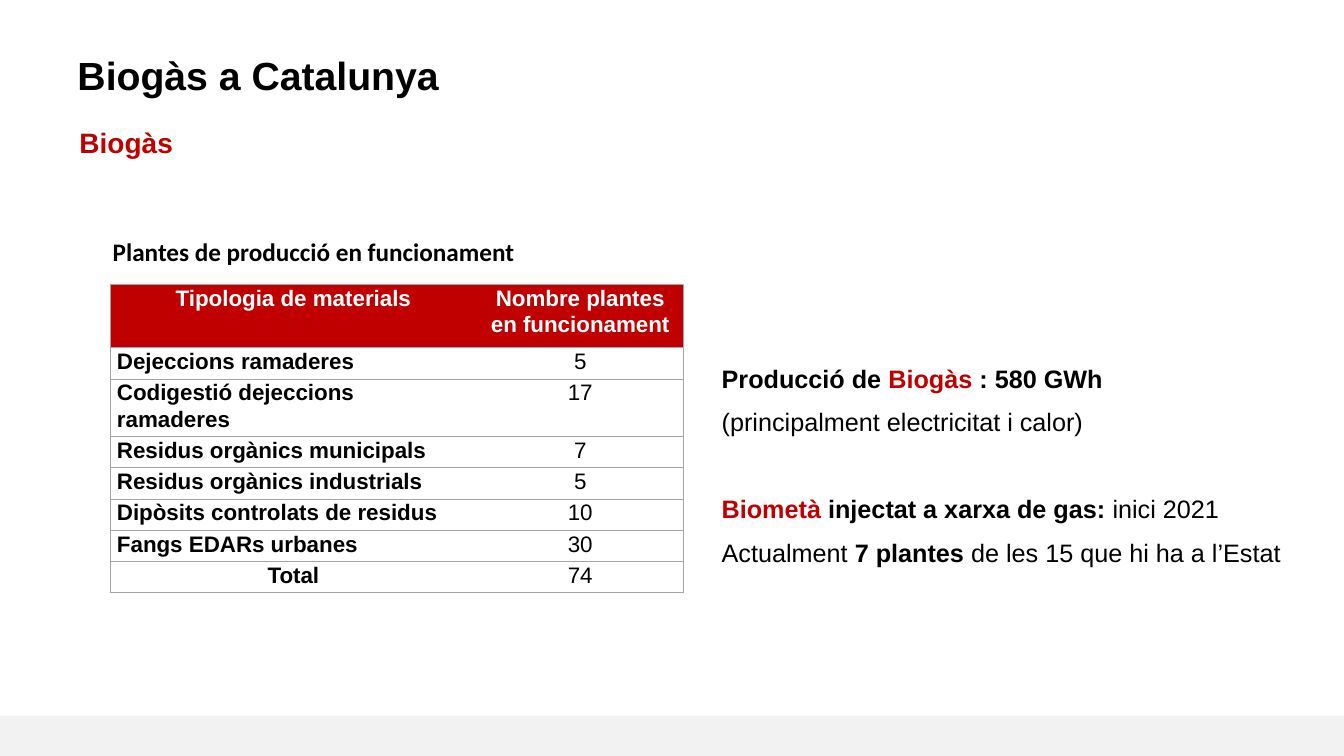
from lxml import etree
from pptx import Presentation
from pptx.dml.color import RGBColor
from pptx.enum import shapes, text
from pptx.oxml import ns
from pptx.util import Inches, Pt

RED, BLACK, WHITE, GREY, PALE = "C00000", "000000", "FFFFFF", "A5A5A5", "F2F2F2"
LEFT, CENTER, JUSTIFY = text.PP_ALIGN.LEFT, text.PP_ALIGN.CENTER, text.PP_ALIGN.JUSTIFY

# Content
TITLE = "Biogàs a Catalunya"
SUBTITLE = "Biogàs"
CAPTION = "Plantes de producció en funcionament"
PLANTS = [
    ("Tipologia de materials", "Nombre plantes en funcionament"),
    ("Dejeccions ramaderes", "5"),
    ("Codigestió dejeccions ramaderes", "17"),
    ("Residus orgànics municipals", "7"),
    ("Residus orgànics industrials", "5"),
    ("Dipòsits controlats de residus", "10"),
    ("Fangs EDARs urbanes", "30"),
    ("Total", "74"),
]
COLUMN_WIDTHS = (3.64, 2.05)
HEADER_HEIGHT, ROW_HEIGHT = 0.63, 0.31
# Each paragraph: space before in points, then spans of (text, colour, bold)
FACTS = [
    (0, [("Producció de ", BLACK, True), ("Biogàs", RED, True), (" : 580 GWh", BLACK, True)]),
    (0, [("(principalment electricitat i calor)", BLACK, False)]),
    (31, [("Biometà", RED, True), (" injectat a xarxa de gas:", BLACK, True),
          (" inici 2021", BLACK, False)]),
    (0, [("Actualment ", BLACK, False), ("7 plantes", BLACK, True),
         (" de les 15 que hi ha a l’Estat", BLACK, False)]),
]


def color(value):
    return RGBColor.from_string(value)


def write(para, words, size=18, font="Arial", ink=BLACK, bold=True, align=LEFT,
          spacing=None, before=0, after=0):
    para.alignment = align
    para.line_spacing = spacing
    para.space_before, para.space_after = Pt(before), Pt(after)
    span = para.add_run()
    span.text = words
    span.font.size, span.font.name, span.font.bold = Pt(size), font, bold
    span.font.color.rgb = color(ink)


def add_box(page, left, top, width, height):
    box = page.shapes.add_textbox(Inches(left), Inches(top), Inches(width), Inches(height))
    box.text_frame.word_wrap = True
    return box.text_frame


def set_borders(cell, visible):
    properties = cell._tc.get_or_add_tcPr()
    for side in "LRTB":
        line = etree.SubElement(properties, ns.qn("a:ln" + side), w=str(Pt(0.5)))
        if side in visible:
            fill = etree.SubElement(line, ns.qn("a:solidFill"))
            etree.SubElement(fill, ns.qn("a:srgbClr"), val=GREY)
        else:
            etree.SubElement(line, ns.qn("a:noFill"))


def add_plants_table(page):
    height = HEADER_HEIGHT + ROW_HEIGHT * (len(PLANTS) - 1)
    table = page.shapes.add_table(len(PLANTS), len(COLUMN_WIDTHS), Inches(1.09), Inches(2.82),
                                  Inches(sum(COLUMN_WIDTHS)), Inches(height)).table
    table.horz_banding = False
    for column, width in zip(table.columns, COLUMN_WIDTHS):
        column.width = Inches(width)
    for r, values in enumerate(PLANTS):
        header = r == 0
        table.rows[r].height = Inches(HEADER_HEIGHT if header else ROW_HEIGHT)
        for c, value in enumerate(values):
            cell = table.cell(r, c)
            cell.margin_left = cell.margin_right = Inches(0.07)
            cell.margin_top = cell.margin_bottom = 0
            set_borders(cell, "LTB" if c == 0 else "RTB")
            if header:
                cell.fill.solid()
                cell.fill.fore_color.rgb = color(RED)
            else:
                cell.fill.background()
            label = c == 0 and 0 < r < len(PLANTS) - 1
            write(cell.text_frame.paragraphs[0], value, size=16, spacing=1.07,
                  ink=WHITE if header else BLACK, bold=header or c == 0,
                  align=LEFT if label else CENTER)


def main():
    deck = Presentation()
    deck.slide_width, deck.slide_height = Inches(13.33), Inches(7.5)
    page = deck.slides.add_slide(deck.slide_layouts[6])

    # Footer band
    band = page.shapes.add_shape(shapes.MSO_SHAPE.RECTANGLE, 0, Inches(7.1),
                                 deck.slide_width, Inches(0.4))
    band.shadow.inherit = False
    band.fill.solid()
    band.fill.fore_color.rgb = color(PALE)
    band.line.fill.background()

    # Headings
    write(add_box(page, 0.67, 0.46, 9.72, 0.57).paragraphs[0], TITLE, size=28)
    write(add_box(page, 0.69, 1.23, 11.77, 0.38).paragraphs[0], SUBTITLE,
          size=20, ink=RED, spacing=0.9)
    write(add_box(page, 1.02, 2.29, 5.5, 0.38).paragraphs[0], CAPTION, font="Calibri")

    # Table of plants
    add_plants_table(page)

    # Key facts
    frame = add_box(page, 7.06, 3.53, 6, 2.17)
    for i, (before, spans) in enumerate(FACTS):
        para = frame.paragraphs[0] if i == 0 else frame.add_paragraph()
        for words, ink, bold in spans:
            write(para, words, ink=ink, bold=bold, align=JUSTIFY, spacing=1.07,
                  before=before, after=8)

    deck.save("out.pptx")


if __name__ == "__main__":
    main()
